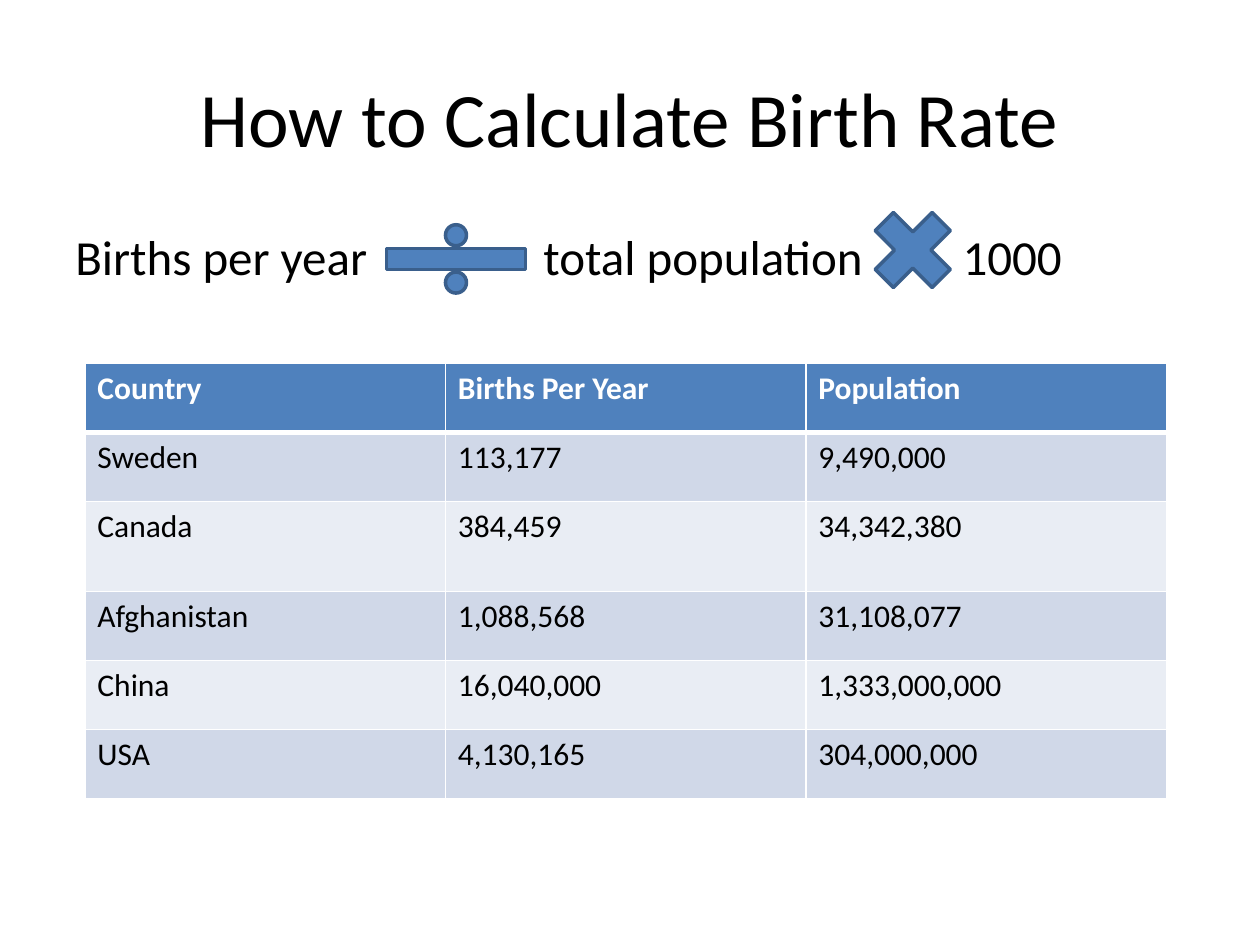
from lxml.etree import SubElement
from pptx import Presentation
from pptx.dml.color import RGBColor
from pptx.enum.shapes import MSO_SHAPE
from pptx.enum.text import MSO_ANCHOR, PP_ALIGN
from pptx.oxml.ns import qn
from pptx.util import Pt

ROWS = [
    ("Country", "Births Per Year", "Population"),
    ("Sweden", "113,177", "9,490,000"),
    ("Canada", "384,459", "34,342,380"),
    ("Afghanistan", "1,088,568", "31,108,077"),
    ("China", "16,040,000", "1,333,000,000"),
    ("USA", "4,130,165", "304,000,000"),
]
ROW_HEIGHTS = [39.5, 39.5, 51.3, 39.5, 39.5, 39.5]


def rgb(value):
    """Turn a hex string into a colour."""
    return RGBColor.from_string(value)


def write(tf, text, size=18, color="000000", bold=False, align=PP_ALIGN.LEFT, font="Calibri"):
    """Put formatted text in a frame and return its paragraph."""
    p = tf.paragraphs[0]
    p.alignment = align
    r = p.add_run()
    r.text = text
    r.font.name, r.font.size, r.font.bold = font, Pt(size), bold
    r.font.color.rgb = rgb(color)
    return p


def place(sp, box):
    """Move and size a shape in points."""
    sp.left, sp.top, sp.width, sp.height = map(Pt, box)


class SlideBuilder:
    """Hold the style and the current slide."""

    accent, outline, white = "4F81BD", "3A5F8C", "FFFFFF"
    bands = ("E9EDF4", "D0D8E8")

    def __init__(self, prs):
        """Add a title-only slide."""
        self.s = prs.slides.add_slide(prs.slide_layouts[5])

    def title(self, text, box):
        """Fill the title placeholder."""
        sp = self.s.shapes.title
        place(sp, box)
        sp.text_frame.vertical_anchor = MSO_ANCHOR.MIDDLE
        write(sp.text_frame, text, size=44, align=PP_ALIGN.CENTER)

    def tabbed_text(self, parts, tabs, box):
        """Add a line of text whose parts start at tab stops."""
        tf = self.s.shapes.add_textbox(*map(Pt, box)).text_frame
        tf.word_wrap = True
        p = write(tf, "\t".join(parts), size=28)
        p.space_before = Pt(5.6)
        tab_list = SubElement(p._p.get_or_add_pPr(), qn("a:tabLst"))
        for pos in tabs:
            SubElement(tab_list, qn("a:tab"), pos=str(Pt(pos)), algn="l")

    def symbol(self, kind, box):
        """Add a filled math sign."""
        sp = self.s.shapes.add_shape(kind, *map(Pt, box))
        sp.shadow.inherit = False
        sp.fill.solid()
        sp.fill.fore_color.rgb = rgb(self.accent)
        sp.line.color.rgb = rgb(self.outline)
        sp.line.width = Pt(2)

    def border(self, cell, side, width):
        """Draw one white cell border."""
        ln = SubElement(cell._tc.get_or_add_tcPr(), qn(f"a:ln{side}"), w=str(Pt(width)))
        SubElement(SubElement(ln, qn("a:solidFill")), qn("a:srgbClr"), val=self.white)

    def table(self, rows, heights, box):
        """Add a banded table with a header row."""
        frame = self.s.shapes.add_table(len(rows), len(rows[0]), *map(Pt, box))
        table = frame.table
        for i, (row, height) in enumerate(zip(rows, heights)):
            table.rows[i].height = Pt(height)
            header = i == 0
            widths = {"L": 1, "R": 1, "T": 3 if i == 1 else 1, "B": 3 if header else 1}
            for j, text in enumerate(row):
                cell = table.cell(i, j)
                for side, width in widths.items():
                    self.border(cell, side, width)
                cell.fill.solid()
                cell.fill.fore_color.rgb = rgb(self.accent if header else self.bands[i % 2])
                write(cell.text_frame, text, bold=header,
                      color=self.white if header else "000000")


def main():
    """Build and save the slide."""
    prs = Presentation()
    prs.slide_width, prs.slide_height = Pt(720), Pt(540)
    b = SlideBuilder(prs)
    b.title("How to Calculate Birth Rate", (36, 21.6, 648, 90))
    b.tabbed_text(("Births per year", "total population", "1000"), (267.5, 507),
                  (36, 126, 648, 356.4))
    b.symbol(MSO_SHAPE.MATH_DIVIDE, (206.6, 122.4, 108, 51.1))
    b.symbol(MSO_SHAPE.MATH_MULTIPLY, (490.3, 111.6, 62.6, 62.6))
    b.table(ROWS, ROW_HEIGHTS, (48.5, 207.6, 618, sum(ROW_HEIGHTS)))
    prs.save("out.pptx")


if __name__ == "__main__":
    main()
